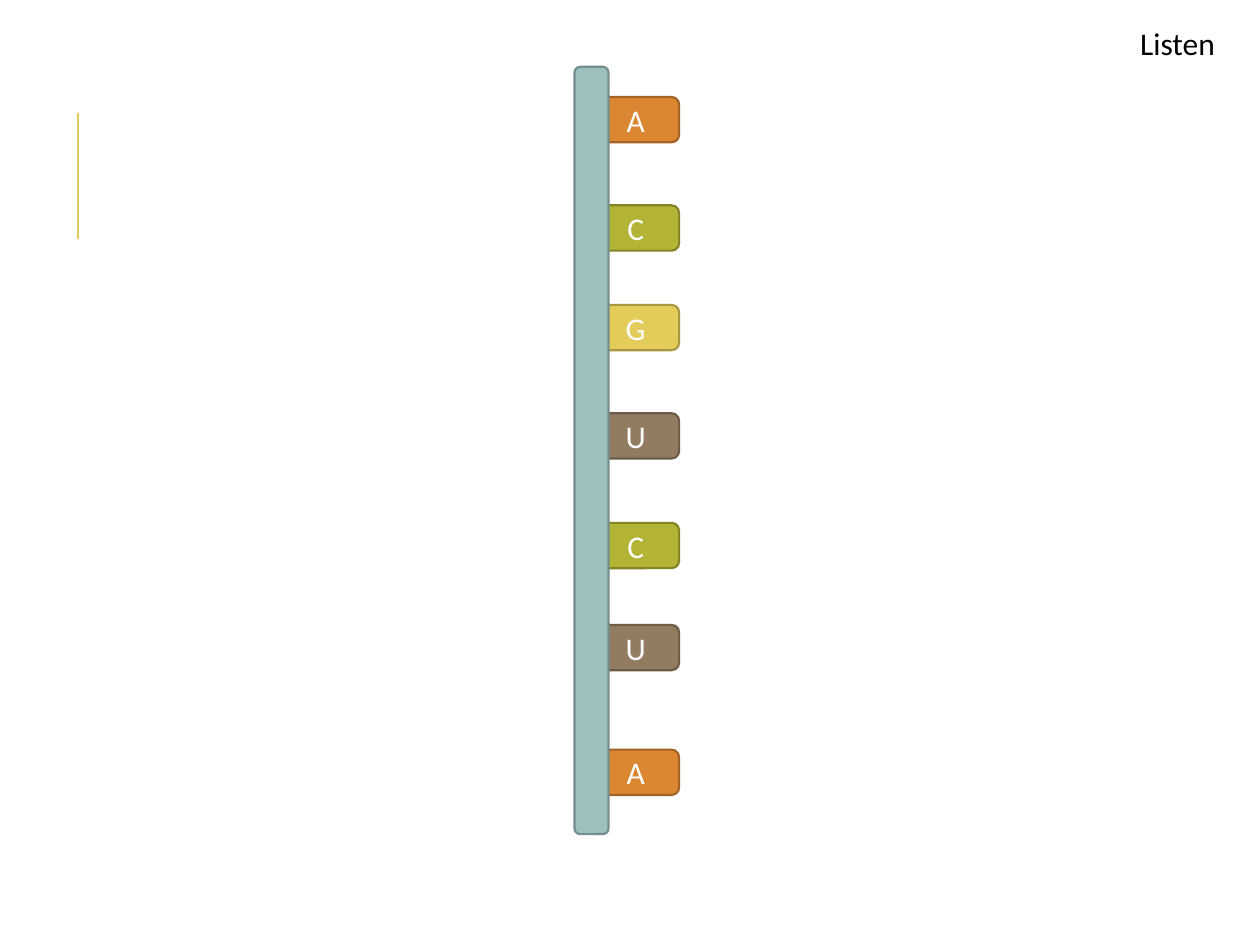
import pptx
import pptx.util
import pptx.dml.color
import pptx.enum.shapes
import pptx.enum.text
import pptx.oxml.ns
import lxml.etree

Inches = pptx.util.Inches
Pt = pptx.util.Pt

COLORS = {
    "A": ("DB8631", "A26324"),
    "C": ("B3B435", "848527"),
    "G": ("E3CC5A", "A89743"),
    "U": ("927C61", "6C5C48"),
    "backbone": ("9DBFBE", "748D8D"),
    "accent": "E3CC5A",
    "letter": "FFFFFF",
    "text": "000000",
}
BASES = [("A", 0.77), ("C", 1.63), ("G", 2.42), ("U", 3.28),
         ("C", 4.15), ("U", 4.96), ("A", 5.95)]
BASE_LEFT, BASE_WIDTH, BASE_HEIGHT = 4.7, 0.69, 0.36
BACKBONE = (4.56, 0.53, 0.27, 6.09)
PROMPT = "Listen"


def rgb(value):
    return pptx.dml.color.RGBColor.from_string(value)


def write(frame, text, color, size=18, font="Calibri", align="LEFT", anchor="TOP"):
    frame.word_wrap = True
    frame.vertical_anchor = pptx.enum.text.MSO_ANCHOR[anchor]
    paragraph = frame.paragraphs[0]
    paragraph.alignment = pptx.enum.text.PP_ALIGN[align]
    run = paragraph.add_run()
    run.text = text
    run.font.size = Pt(size)
    run.font.name = font
    run.font.color.rgb = rgb(color)


def add_block(strand, box, colors):
    block = strand.shapes.add_shape(
        pptx.enum.shapes.MSO_SHAPE.ROUNDED_RECTANGLE, *map(Inches, box))
    fill, outline = colors
    block.shadow.inherit = False
    block.fill.solid()
    block.fill.fore_color.rgb = rgb(fill)
    block.line.color.rgb = rgb(outline)
    block.line.width = Pt(1.25)
    return block


def main():
    deck = pptx.Presentation()
    deck.slide_width, deck.slide_height = Inches(10), Inches(7.5)
    slide = deck.slides.add_slide(deck.slide_layouts[6])

    accent = slide.shapes.add_connector(
        pptx.enum.shapes.MSO_CONNECTOR.STRAIGHT,
        Inches(0.62), Inches(1.9), Inches(0.62), Inches(0.9))
    accent.line.color.rgb = rgb(COLORS["accent"])
    accent.line.width = Pt(1.5)
    lxml.etree.SubElement(accent.element.spPr, pptx.oxml.ns.qn("a:effectLst"))

    strand = slide.shapes.add_group_shape()
    for letter, top in BASES:
        base = add_block(strand, (BASE_LEFT, top, BASE_WIDTH, BASE_HEIGHT), COLORS[letter])
        write(base.text_frame, letter, COLORS["letter"], align="CENTER", anchor="MIDDLE")
    add_block(strand, BACKBONE, COLORS["backbone"])

    prompt = slide.shapes.add_textbox(Inches(8.95), Inches(0.14), Inches(0.95), Inches(0.4))
    write(prompt.text_frame, PROMPT, COLORS["text"])
    prompt.text_frame.auto_size = pptx.enum.text.MSO_AUTO_SIZE.SHAPE_TO_FIT_TEXT

    deck.save("out.pptx")


if __name__ == "__main__":
    main()
